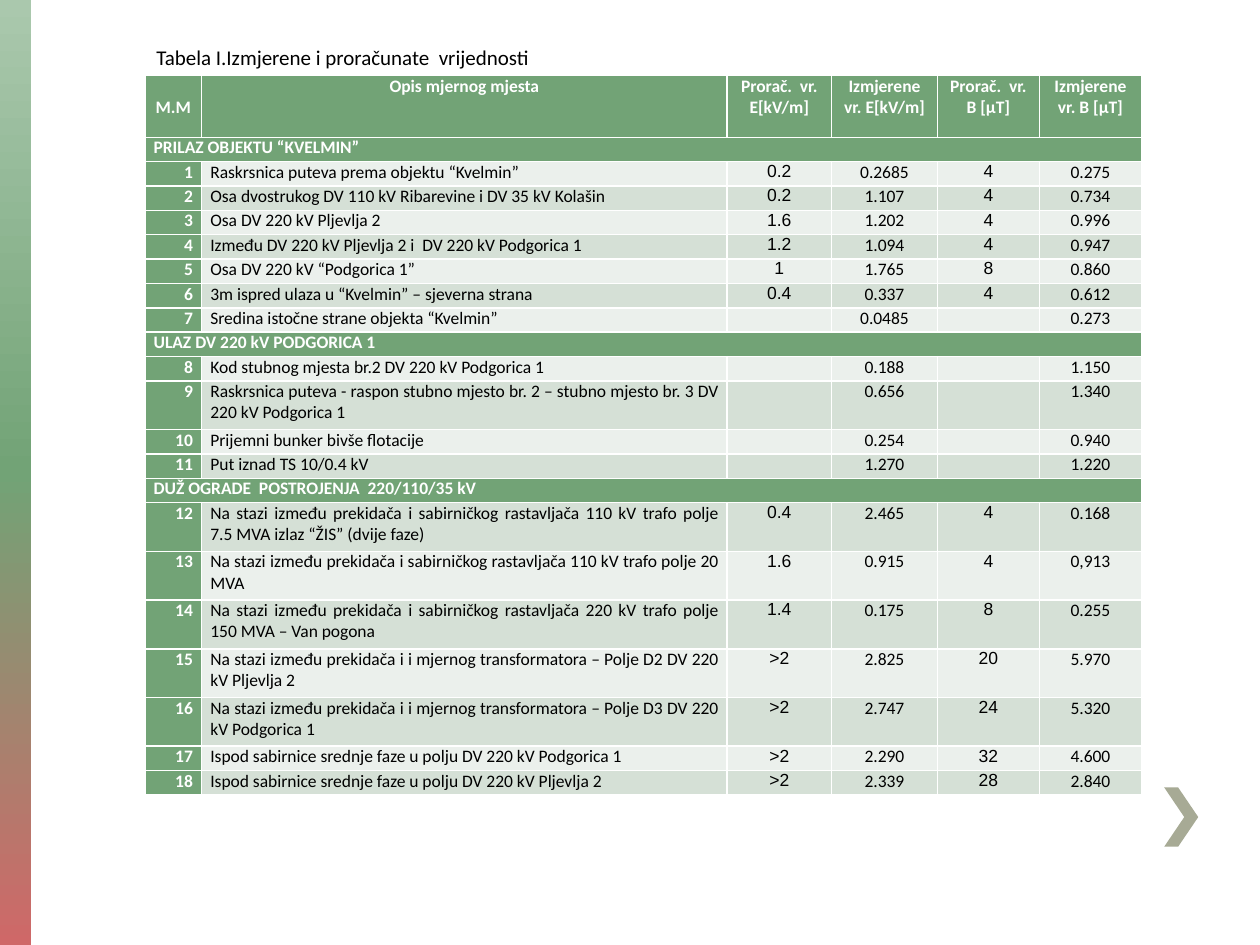
from copy import deepcopy
from dataclasses import dataclass

from pptx import Presentation
from pptx.dml.color import RGBColor
from pptx.enum.shapes import MSO_SHAPE
from pptx.enum.text import MSO_ANCHOR, MSO_AUTO_SIZE, PP_ALIGN
from pptx.util import Inches, Pt

LEFT, CENTER, RIGHT, JUSTIFY = PP_ALIGN.LEFT, PP_ALIGN.CENTER, PP_ALIGN.RIGHT, PP_ALIGN.JUSTIFY
TOP, FIT_SHAPE = MSO_ANCHOR.TOP, MSO_AUTO_SIZE.SHAPE_TO_FIT_TEXT
RECTANGLE, CHEVRON = MSO_SHAPE.RECTANGLE, MSO_SHAPE.CHEVRON


@dataclass(frozen=True)
class Theme:
    text_font: str = "Calibri"
    estimate_font: str = "Arial"
    caption_size: int = 12
    table_size: int = 10
    black: str = "000000"
    white: str = "FFFFFF"
    green: str = "72A376"
    bands: tuple[str, str] = ("EBF0EC", "D5E0D6")
    chevron: str = "A7AA95"
    side_bar: tuple[str, ...] = ("AAC8AD", "72A376", "CF6868")


@dataclass(frozen=True)
class Section:
    heading: str


@dataclass(frozen=True)
class Site:
    number: int
    description: str
    estimated_e: str
    measured_e: str
    estimated_b: str
    measured_b: str
    lines: int = 1


THEME = Theme()
CAPTION = "Tabela I.Izmjerene i proračunate  vrijednosti"
HEADINGS = ("\vM.M", "Opis mjernog mjesta", "Prorač.  vr. E[kV/m]", "Izmjerene vr. E[kV/m]",
            "Prorač.  vr. B [µT]", "Izmjerene vr. B [µT]")
COLUMN_WIDTHS = (0.45, 4.17, 0.83, 0.84, 0.81, 0.81)
TABLE_HEIGHT, HEADER_HEIGHT = 5.71, 0.49
ROWS = (
    Section("PRILAZ OBJEKTU “KVELMIN”"),
    Site(1, "Raskrsnica puteva prema objektu “Kvelmin”", "0.2", "0.2685", "4", "0.275"),
    Site(2, "Osa dvostrukog DV 110 kV Ribarevine i DV 35 kV Kolašin", "0.2", "1.107", "4", "0.734"),
    Site(3, "Osa DV 220 kV Pljevlja 2", "1.6", "1.202", "4", "0.996"),
    Site(4, "Između DV 220 kV Pljevlja 2 i  DV 220 kV Podgorica 1", "1.2", "1.094", "4", "0.947"),
    Site(5, "Osa DV 220 kV “Podgorica 1”", "1", "1.765", "8", "0.860"),
    Site(6, "3m ispred ulaza u “Kvelmin” – sjeverna strana", "0.4", "0.337", "4", "0.612"),
    Site(7, "Sredina istočne strane objekta “Kvelmin”", "", "0.0485", "", "0.273"),
    Section("ULAZ DV 220 kV PODGORICA 1"),
    Site(8, "Kod stubnog mjesta br.2 DV 220 kV Podgorica 1", "", "0.188", "", "1.150"),
    Site(9, "Raskrsnica puteva - raspon stubno mjesto br. 2 – stubno mjesto br. 3 DV 220 kV Podgorica 1",
         "", "0.656", "", "1.340", 2),
    Site(10, "Prijemni bunker bivše flotacije", "", "0.254", "", "0.940"),
    Site(11, "Put iznad TS 10/0.4 kV", "", "1.270", "", "1.220"),
    Section("DUŽ OGRADE  POSTROJENJA  220/110/35 kV"),
    Site(12, "Na stazi između prekidača i sabirničkog rastavljača 110 kV trafo polje 7.5 MVA izlaz “ŽIS” (dvije faze)",
         "0.4", "2.465", "4", "0.168", 2),
    Site(13, "Na stazi između prekidača i sabirničkog rastavljača 110 kV trafo polje 20 MVA",
         "1.6", "0.915", "4", "0,913", 2),
    Site(14, "Na stazi između prekidača i sabirničkog rastavljača 220 kV trafo polje 150 MVA – Van pogona",
         "1.4", "0.175", "8", "0.255", 2),
    Site(15, "Na stazi između prekidača i i mjernog transformatora – Polje D2 DV 220 kV Pljevlja 2",
         ">2", "2.825", "20", "5.970", 2),
    Site(16, "Na stazi između prekidača i i mjernog transformatora – Polje D3 DV 220 kV Podgorica 1",
         ">2", "2.747", "24", "5.320", 2),
    Site(17, "Ispod sabirnice srednje faze u polju DV 220 kV Podgorica 1", ">2", "2.290", "32", "4.600"),
    Site(18, "Ispod sabirnice srednje faze u polju DV 220 kV Pljevlja 2", ">2", "2.339", "28", "2.840"),
)


def set_font(paragraph, size: int, color: str, bold: bool = False, name: str = THEME.text_font) -> None:
    """Apply one typeface setting to a whole paragraph."""
    font = paragraph.font
    font.name, font.size, font.bold = name, Pt(size), bold
    font.color.rgb = RGBColor.from_string(color)


def fill_cell(cell, text: str, align, fill: str, strong: bool = False, font: str = THEME.text_font) -> None:
    """Write and format one table cell."""
    cell.margin_left = cell.margin_right = Inches(0.07)
    cell.margin_top = cell.margin_bottom = 0
    cell.fill.solid()
    cell.fill.fore_color.rgb = RGBColor.from_string(fill)
    cell.text = text
    paragraph = cell.text_frame.paragraphs[0]
    paragraph.alignment = align
    set_font(paragraph, THEME.table_size, THEME.white if strong else THEME.black, strong, font)
    if not text:
        paragraph._p.get_or_add_endParaRPr().set("sz", str(THEME.table_size * 100))


def fill_site(table, row: int, site: Site) -> None:
    """Write one measuring site into a table row."""
    band = THEME.bands[row % 2]
    fill_cell(table.cell(row, 0), str(site.number), RIGHT, THEME.green, True)
    fill_cell(table.cell(row, 1), site.description, JUSTIFY, band)
    values = (site.estimated_e, site.measured_e, site.estimated_b, site.measured_b)
    for column, value in enumerate(values, 2):
        font = THEME.text_font if column % 2 else THEME.estimate_font
        fill_cell(table.cell(row, column), value, CENTER, band, font=font)


def add_measurements(slide) -> None:
    """Add the table of estimated and measured field values."""
    table = slide.shapes.add_table(len(ROWS) + 1, len(HEADINGS), Inches(1.15), Inches(0.6),
                                   Inches(sum(COLUMN_WIDTHS)), Inches(TABLE_HEIGHT)).table
    table.first_col, table.horz_banding = True, False
    for column, (heading, width) in enumerate(zip(HEADINGS, COLUMN_WIDTHS)):
        table.columns[column].width = Inches(width)
        fill_cell(table.cell(0, column), heading, CENTER, THEME.green, True)
    table.rows[0].height = Inches(HEADER_HEIGHT)
    line_counts = [entry.lines if isinstance(entry, Site) else 1 for entry in ROWS]
    line_height = (TABLE_HEIGHT - HEADER_HEIGHT) / sum(line_counts)
    for row, (entry, lines) in enumerate(zip(ROWS, line_counts), 1):
        table.rows[row].height = Inches(line_height * lines)
        if isinstance(entry, Section):
            table.cell(row, 0).merge(table.cell(row, len(HEADINGS) - 1))
            fill_cell(table.cell(row, 0), entry.heading, LEFT, THEME.green, True)
        else:
            fill_site(table, row, entry)


def add_decor(slide, height: int) -> None:
    """Add the gradient side bar and the corner chevron."""
    side_bar = slide.shapes.add_shape(RECTANGLE, 0, 0, Inches(0.25), height)
    side_bar.fill.gradient()
    side_bar.fill.gradient_angle = 270
    stop_list = side_bar._element.spPr.gradFill.gsLst
    stop_list.append(deepcopy(stop_list[-1]))
    for stop, color, position in zip(side_bar.fill.gradient_stops, THEME.side_bar, (0, 0.5, 1)):
        stop.color.rgb, stop.position = RGBColor.from_string(color), position
    chevron = slide.shapes.add_shape(CHEVRON, Inches(9.24), Inches(6.25), Inches(0.27), Inches(0.47))
    chevron.adjustments[0] = 0.59
    chevron.fill.solid()
    chevron.fill.fore_color.rgb = RGBColor.from_string(THEME.chevron)
    for decor in (side_bar, chevron):
        decor.line.fill.background()
        decor.shadow.inherit = False


def add_caption(slide) -> None:
    """Turn the title placeholder into the table caption."""
    caption = slide.shapes.title
    caption.left, caption.top, caption.width, caption.height = map(Inches, (1.14, 0.3, 3.39, 0.3))
    frame = caption.text_frame
    frame.text = CAPTION
    frame.word_wrap, frame.auto_size, frame.vertical_anchor = True, FIT_SHAPE, TOP
    frame.paragraphs[0].alignment = LEFT
    set_font(frame.paragraphs[0], THEME.caption_size, THEME.black)


def main() -> None:
    """Build and save the slide."""
    presentation = Presentation()
    presentation.slide_width, presentation.slide_height = Inches(10), Inches(7.5)
    slide = presentation.slides.add_slide(presentation.slide_layouts[5])
    add_decor(slide, presentation.slide_height)
    add_measurements(slide)
    add_caption(slide)
    presentation.save("out.pptx")


if __name__ == "__main__":
    main()
